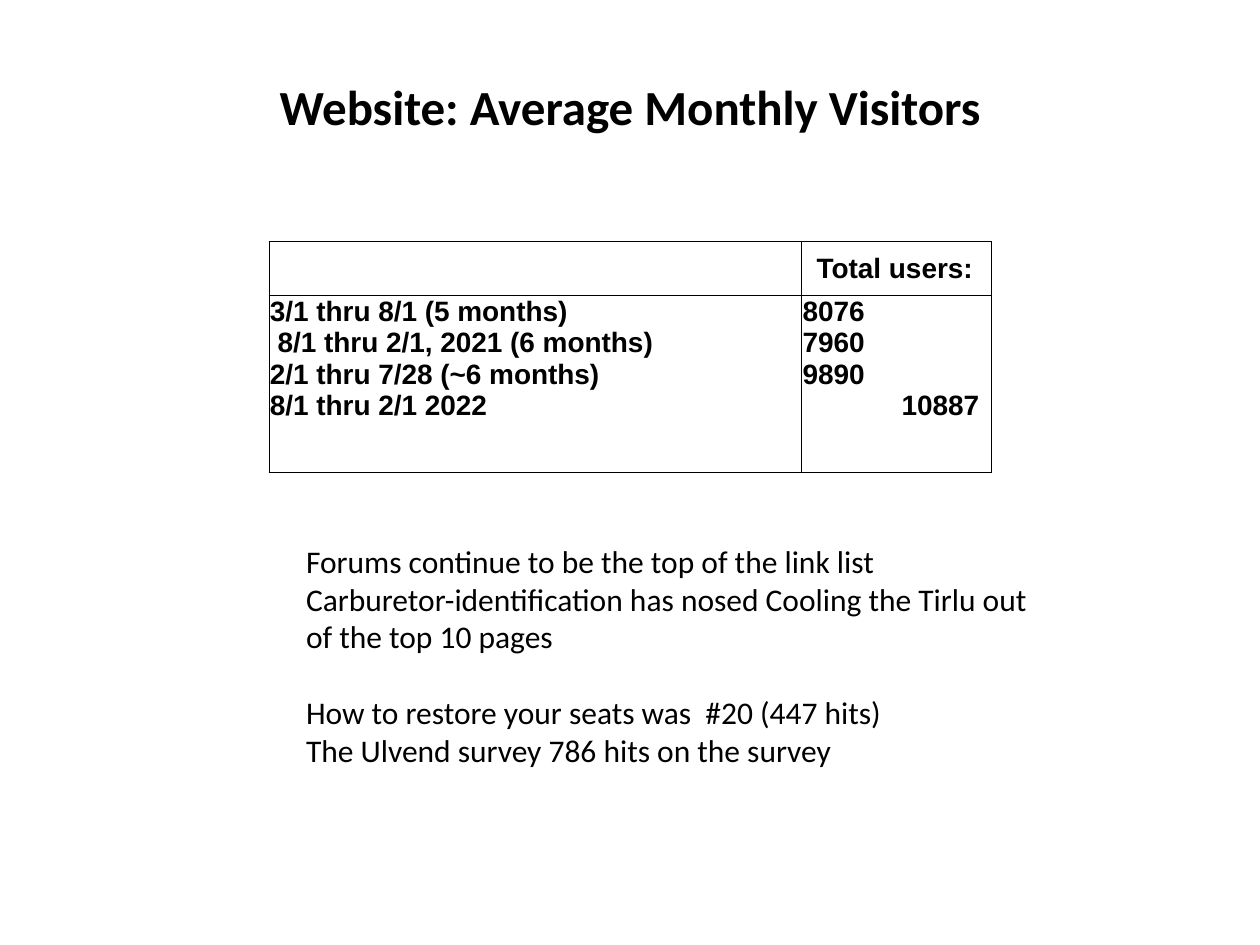
from dataclasses import dataclass

from lxml import etree
from pptx import Presentation
from pptx import util as u
from pptx.dml.color import RGBColor
from pptx.enum import text
from pptx.oxml.ns import qn

BLACK = "000000"
LEFT, CENTER, RIGHT = text.PP_ALIGN.LEFT, text.PP_ALIGN.CENTER, text.PP_ALIGN.RIGHT


@dataclass
class Style:
    font: str
    size: float
    bold: bool = False


@dataclass
class Line:
    wording: str
    align: text.PP_ALIGN = LEFT
    before: float = 0


@dataclass
class Period:
    dates: str
    users: str
    align: text.PP_ALIGN = LEFT


TITLE = Style("Calibri", 28, True)
TABLE = Style("Arial", 16, True)
COMMENT = Style("Calibri", 18)

PERIODS = [
    Period("3/1 thru 8/1 (5 months)", "8076"),
    Period(" 8/1 thru 2/1, 2021 (6 months)", "7960"),
    Period("2/1 thru 7/28 (~6 months)", "9890"),
    Period("8/1 thru 2/1 2022", "10887", RIGHT),
]
COMMENTS = [
    Line("Forums continue to be the top of the link list"),
    Line("Carburetor-identification has nosed Cooling the Tirlu out of the top 10 pages"),
    Line("How to restore your seats was  #20 (447 hits)", before=21.6),
    Line("The Ulvend survey 786 hits on the survey"),
]


def color(value: str) -> RGBColor:
    return RGBColor.from_string(value)


def write(frame, lines: list[Line], style: Style) -> None:
    for index, line in enumerate(lines):
        paragraph = frame.paragraphs[0] if index == 0 else frame.add_paragraph()
        paragraph.alignment = line.align
        paragraph.space_before = u.Pt(line.before)
        run = paragraph.add_run()
        run.text = line.wording
        run.font.name = style.font
        run.font.size = u.Pt(style.size)
        run.font.bold = style.bold
        run.font.color.rgb = color(BLACK)


def format_cell(cell, right_margin: float) -> None:
    cell.margin_left = cell.margin_top = u.Cm(0.02)
    cell.margin_right, cell.margin_bottom = u.Cm(right_margin), 0
    properties = cell._tc.get_or_add_tcPr()
    for side in ("a:lnL", "a:lnR", "a:lnT", "a:lnB"):
        border = etree.SubElement(properties, qn(side), w=str(u.Pt(0.25)))
        fill = etree.SubElement(border, qn("a:solidFill"))
        etree.SubElement(fill, qn("a:srgbClr"), val=BLACK)
    cell.fill.background()


def main() -> None:
    deck = Presentation()
    deck.slide_width, deck.slide_height = u.Cm(25.4), u.Cm(19.05)
    slide = deck.slides.add_slide(deck.slide_layouts[5])

    # Title, raised by a deeper bottom margin
    title = slide.shapes.title
    title.left, title.top = u.Cm(1.27), u.Cm(1.07)
    title.width, title.height = u.Cm(22.86), u.Cm(3.18)
    title.text_frame.vertical_anchor = text.MSO_ANCHOR.MIDDLE
    title.text_frame.margin_bottom = u.Cm(1.18)
    write(title.text_frame, [Line("Website: Average Monthly Visitors", CENTER)], TITLE)

    # Visitor table
    widths, heights = (10.74, 3.83), (1.09, 3.56)
    visitors = slide.shapes.add_table(
        2, 2, u.Cm(5.42), u.Cm(4.87), u.Cm(sum(widths)), u.Cm(sum(heights))
    ).table
    visitors.first_row = visitors.horz_banding = False
    for column, width in zip(visitors.columns, widths):
        column.width = u.Cm(width)
    for row, height in zip(visitors.rows, heights):
        row.height = u.Cm(height)
        for cell, margin in zip(row.cells, (0.02, 0.25)):
            format_cell(cell, margin)

    users_head = visitors.cell(0, 1)
    users_head.vertical_anchor = text.MSO_ANCHOR.MIDDLE
    write(users_head.text_frame, [Line(" Total users:", CENTER)], TABLE)
    dates = [Line(p.dates) for p in PERIODS]
    users = [Line(p.users, p.align) for p in PERIODS]
    write(visitors.cell(1, 0).text_frame, dates, TABLE)
    write(visitors.cell(1, 1).text_frame, users, TABLE)

    # Comments
    comments = slide.shapes.add_textbox(u.Cm(5.92), u.Cm(10.8), u.Cm(15.24), u.Cm(5.64))
    comments.text_frame.word_wrap = True
    write(comments.text_frame, COMMENTS, COMMENT)

    deck.save("out.pptx")


if __name__ == "__main__":
    main()
